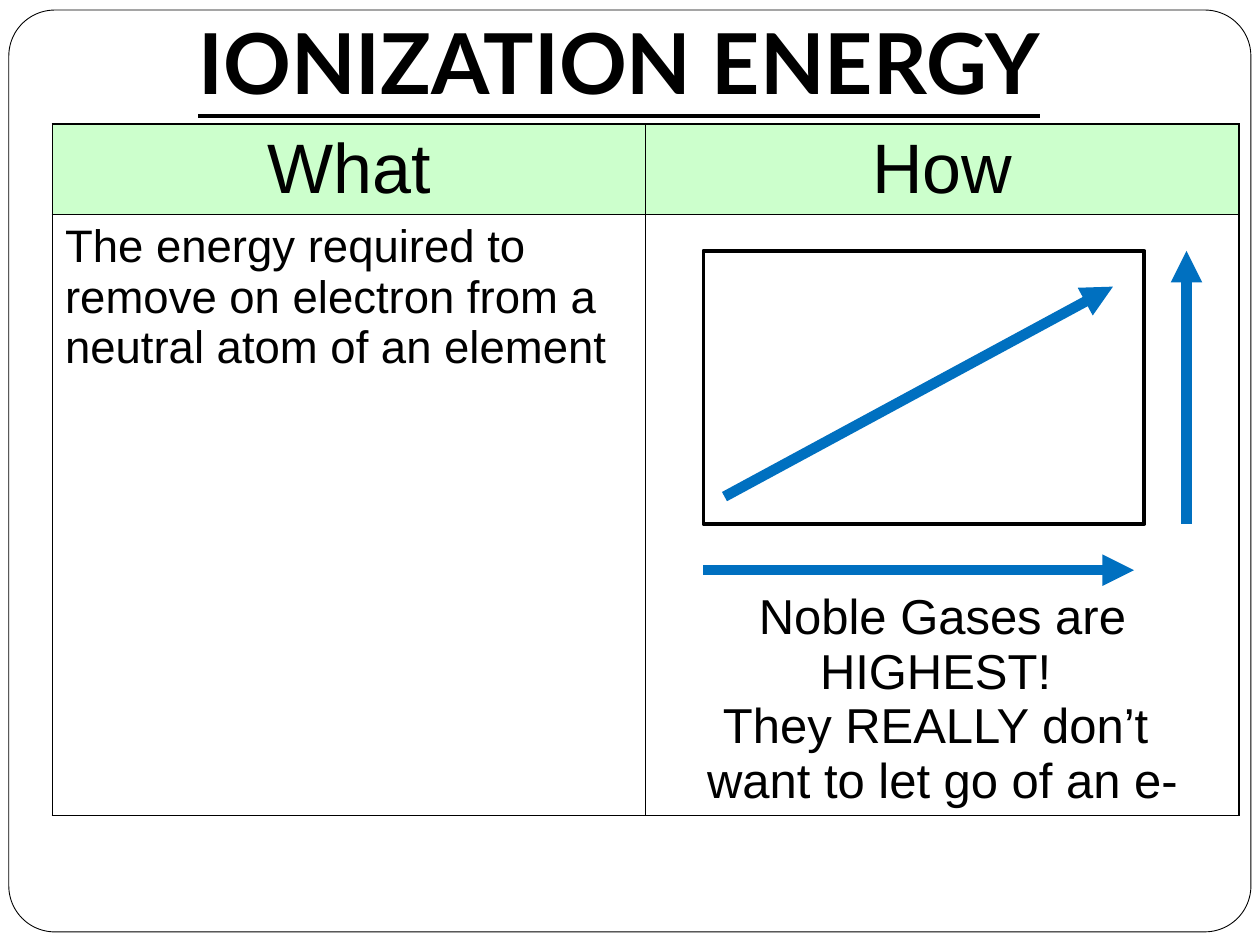
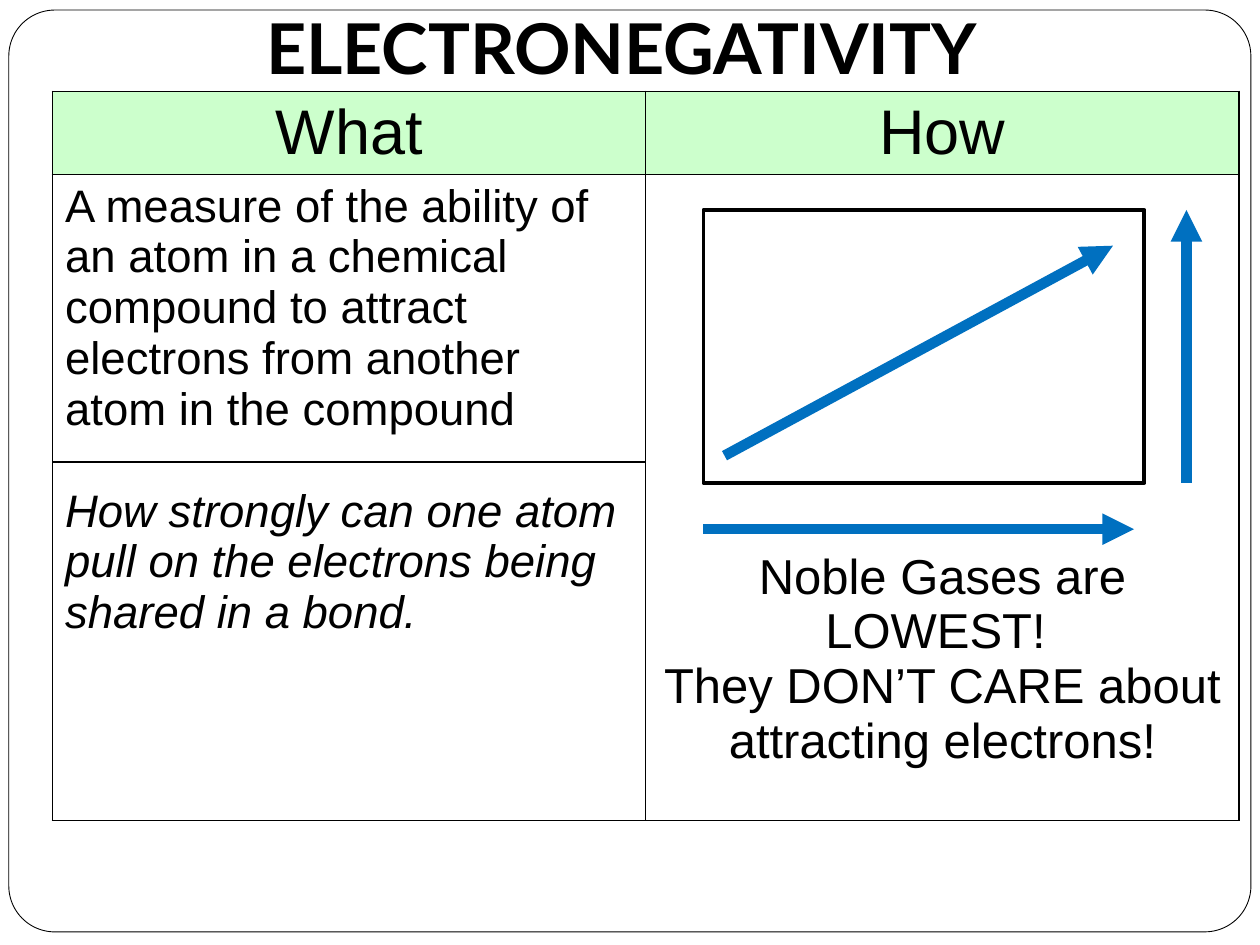
from lxml.etree import SubElement as Sub
from pptx import Presentation
from pptx.dml.color import RGBColor as Rgb
from pptx.enum.shapes import MSO_CONNECTOR as Conn, MSO_SHAPE as Shape
from pptx.enum.text import MSO_ANCHOR as Anchor, PP_ALIGN as Align
from pptx.oxml.ns import qn
from pptx.util import Inches, Pt

BLACK = Rgb(0x00, 0x00, 0x00)
WHITE = Rgb(0xFF, 0xFF, 0xFF)
GREEN = Rgb(0xCC, 0xFF, 0xCC)
BLUE = Rgb(0x00, 0x70, 0xC0)
HEAD, BODY = "Lato", "Arial"

WIDE, HIGH = Inches(10), Inches(7.5)
COLS, ROWS = 120, 90
LEFT, HALF = 5, 56.5
BOX_X, BOX_W, BOX_H = 67, 42, 26


def col(n):
    return round(WIDE * n / COLS)


def row(n):
    return round(HIGH * n / ROWS)


def area(x, y, w, h):
    return col(x), row(y), col(w), row(h)


def add_run(para, text, size, font=BODY, bold=False, slant=False, under=False):
    run = para.add_run()
    run.text = text
    face = run.font
    face.name, face.size, face.color.rgb = font, Pt(size), BLACK
    face.bold, face.italic, face.underline = bold, slant, under


def add_box(slide, kind, place, weight, fill=None):
    box = slide.shapes.add_shape(kind, *place)
    box.shadow.inherit = False
    if fill is None:
        box.fill.background()
    else:
        box.fill.solid()
        box.fill.fore_color.rgb = fill
    box.line.color.rgb = BLACK
    box.line.width = Pt(weight)
    return box


def add_frame(slide):
    frame = add_box(slide, Shape.ROUNDED_RECTANGLE,
                    area(0.84, 0.96, 118.3, 87.8), 0.5, WHITE)
    frame.adjustments[0] = 0.05
    slide.slide_layout.shapes.element.insert(2, frame.element)


def add_line(slide, start, end, color, weight, arrow=False):
    line = slide.shapes.add_connector(
        Conn.STRAIGHT, col(start[0]), row(start[1]), col(end[0]), row(end[1]))
    line.line.color.rgb = color
    line.line.width = Pt(weight)
    if arrow:
        Sub(line.line._get_or_add_ln(), qn("a:tailEnd"), type="triangle")
    Sub(line.element.spPr, qn("a:effectLst"))


def set_title(slide, text, size, x, y):
    title = slide.shapes.title
    title.left, title.top, title.width, title.height = area(x, y, 110, 8.8)
    frame = title.text_frame
    frame.word_wrap = True
    frame.vertical_anchor = Anchor.BOTTOM
    frame.margin_left = frame.margin_right = frame.margin_bottom = Inches(0.1)
    frame.margin_top = Inches(0.05)
    para = frame.paragraphs[0]
    para.alignment = Align.CENTER
    add_run(para, text, size, HEAD, bold=True, under=True)


def style_cell(cell, fill=None):
    props = cell._tc.get_or_add_tcPr()
    for side in ("lnL", "lnR", "lnT", "lnB"):
        edge = Sub(props, qn("a:" + side), w=str(Pt(1)))
        ink = Sub(edge, qn("a:solidFill"))
        Sub(ink, qn("a:srgbClr"), val=str(BLACK))
    if fill is None:
        cell.fill.background()
    else:
        cell.fill.solid()
        cell.fill.fore_color.rgb = fill


def fill_what(cell, text, hint):
    frame = cell.text_frame
    add_run(frame.paragraphs[0], text, 26)
    if hint:
        para = frame.add_paragraph()
        para.space_before = Pt(29)
        add_run(para, hint, 26, slant=True)


def fill_how(cell, lines):
    cell.margin_top = Inches(2.98)
    para = cell.text_frame.paragraphs[0]
    para.alignment = Align.CENTER
    for i, text in enumerate(lines):
        if i:
            para.add_line_break()
        add_run(para, text, 28)


def add_grid(slide, top, highs, size, what, hint, how):
    grid = slide.shapes.add_table(
        2, 2, *area(LEFT, top, 2 * HALF, sum(highs))).table
    grid.first_row = grid.horz_banding = False
    for side in grid.columns:
        side.width = col(HALF)
    for band, high in zip(grid.rows, highs):
        band.height = row(high)
    for i, name in enumerate(("What", "How")):
        cell = grid.cell(0, i)
        style_cell(cell, GREEN)
        para = cell.text_frame.paragraphs[0]
        para.alignment = Align.CENTER
        add_run(para, name, size)
        style_cell(grid.cell(1, i))
    fill_what(grid.cell(1, 0), what, hint)
    fill_how(grid.cell(1, 1), how)


def add_trend(slide, top):
    add_box(slide, Shape.RECTANGLE, area(BOX_X, top, BOX_W, BOX_H), 2.25)
    paths = (
        ((BOX_X, 30.4), (108, 30.4)),
        ((113, BOX_H), (113, 0)),
        ((69, 23.4), (106, 3.4)),
    )
    for (x1, y1), (x2, y2) in paths:
        add_line(slide, (x1, top + y1), (x2, top + y2), BLUE, 6, True)


def main():
    deck = Presentation()
    deck.slide_width, deck.slide_height = WIDE, HIGH
    plan = deck.slide_layouts[5]

    ion = deck.slides.add_slide(plan)
    add_frame(ion)
    set_title(ion, "IONIZATION ENERGY", 48, 4, 3)
    add_grid(ion, 11.8, (8.6, 57.2), 40,
             "The energy required to remove on electron from a neutral atom "
             "of an element", None,
             ("Noble Gases are HIGHEST! ", "They REALLY don’t ",
              "want to let go of an e-"))
    add_trend(ion, 23.9)

    pull = deck.slides.add_slide(plan)
    set_title(pull, "ELECTRONEGATIVITY", 40, 4.2, 0.84)
    add_grid(pull, 8.7, (7.8, 61.5), 36,
             "A measure of the ability of an atom in a chemical compound to "
             "attract electrons from another atom in the compound",
             "How strongly can one atom pull on the electrons being shared "
             "in a bond.",
             ("Noble Gases are LOWEST! ",
              "They DON’T CARE about attracting electrons!"))
    add_trend(pull, 20)
    add_line(pull, (LEFT, 44), (LEFT + HALF, 44), BLACK, 0.75)

    deck.save("out.pptx")


if __name__ == "__main__":
    main()
